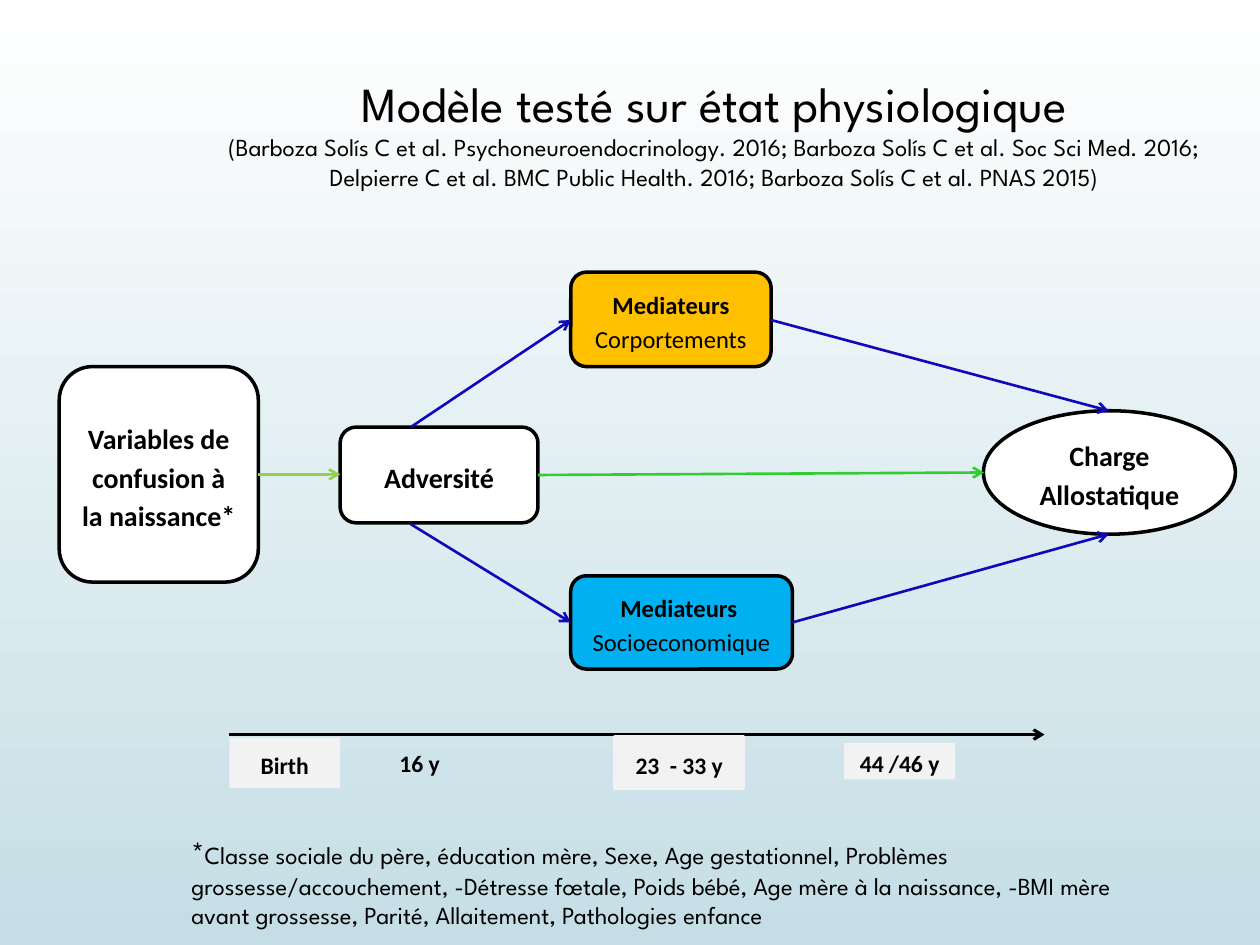
"""Build the slide of the mediation model from birth adversity to allostatic load."""
from lxml.etree import SubElement
from pptx import Presentation
from pptx.dml.color import RGBColor
from pptx.enum.shapes import MSO_CONNECTOR as Connector, MSO_SHAPE as Shape
from pptx.enum.text import MSO_ANCHOR as Anchor, PP_ALIGN as Align
from pptx.oxml.ns import qn
from pptx.util import Inches, Pt

COLUMNS, ROWS = 100, 75
BLACK, WHITE, GREY, BLUE = "000000", "FFFFFF", "F2F2F2", "1008BA"

color = RGBColor.from_string
presentation = Presentation()
presentation.slide_width, presentation.slide_height = Inches(10), Inches(7.5)
column = presentation.slide_width / COLUMNS
row = presentation.slide_height / ROWS
slide = presentation.slides.add_slide(presentation.slide_layouts[6])


def write(shape, paragraphs, font_name, align, anchor, spacing):
    frame = shape.text_frame
    frame.word_wrap, frame.vertical_anchor = True, anchor
    for index, runs in enumerate(paragraphs):
        paragraph = frame.add_paragraph() if index else frame.paragraphs[0]
        paragraph.alignment, paragraph.line_spacing = align, spacing
        for text, size, bold in runs:
            run = paragraph.add_run()
            run.text = text
            run.font.color.rgb = color(BLACK)
            font_format = {"name": font_name, "size": Pt(size), "bold": bold}
            for name, value in font_format.items():
                setattr(run.font, name, value)


def draw_box(kind, area, fill, line, paragraphs):
    left, top, width, height = area
    shape = slide.shapes.add_shape(kind, int(left * column), int(top * row),
                                   int(width * column), int(height * row))
    shape.shadow.inherit = False
    for target, value in ((shape.fill, fill), (shape.line.fill, line)):
        if value:
            target.solid()
            target.fore_color.rgb = color(value)
        else:
            target.background()
    if line:
        shape.line.width = Pt(2)
    write(shape, paragraphs, "Calibri", Align.CENTER, Anchor.MIDDLE, 1.15)


background = slide.background.fill
background.gradient()
background.gradient_angle = 270
for stop, value in zip(background.gradient_stops, (WHITE, "C5DEE5")):
    stop.color.rgb = color(value)

boxes = [
    (Shape.ROUNDED_RECTANGLE, (27, 33.9, 15.7, 7.6), WHITE,
     [[("Adversité", 16, True)]]),
    (Shape.OVAL, (78.05, 32.6, 20, 9.8), WHITE,
     [[("Charge Allostatique", 16, True)]]),
    (Shape.ROUNDED_RECTANGLE, (45.3, 21.6, 15.9, 7.5), "FFC000",
     [[("Mediateurs", 14, True)], [("Corportements", 14, False)]]),
    (Shape.ROUNDED_RECTANGLE, (45.3, 45.7, 17.6, 7.4), "00B0F0",
     [[("Mediateurs ", 14, True)], [("Socioeconomique", 14, False)]]),
    (Shape.ROUNDED_RECTANGLE, (4.7, 29.1, 15.8, 17.1), WHITE,
     [[("Variables de confusion à la naissance*", 16, True)]]),
]
for kind, area, fill, paragraphs in boxes:
    draw_box(kind, area, fill, BLACK, paragraphs)

arrows = [
    ((18.2, 58.3), (82.9, 58.3), BLACK, 1.75),
    ((42.7, 37.7), (78.1, 37.5), "33CC33", 1.5),
    ((20.5, 37.65), (27, 37.65), "92D050", 1.5),
    ((32.6, 33.9), (45.3, 25.4), BLUE, 1.5),
    ((61.2, 25.4), (88, 32.6), BLUE, 1.5),
    ((32.6, 41.6), (45.3, 49.4), BLUE, 1.5),
    ((62.9, 49.4), (88, 42.4), BLUE, 1.5),
]
for start, end, value, width in arrows:
    arrow = slide.shapes.add_connector(
        Connector.STRAIGHT, int(start[0] * column), int(start[1] * row),
        int(end[0] * column), int(end[1] * row))
    arrow.line.color.rgb = color(value)
    arrow.line.width = Pt(width)
    properties = arrow._element.spPr
    SubElement(properties.find(qn("a:ln")), qn("a:tailEnd"), type="arrow")
    SubElement(properties, qn("a:effectLst"))

ages = [
    ("Birth", (18.2, 58.55, 8.8, 4), GREY, None),
    ("16 y", (28.9, 58.3, 8.8, 4.2), None, None),
    ("23  - 33 y", (48.8, 58.5, 10.2, 4.1), GREY, GREY),
    ("44 /46 y", (67, 58.95, 8.8, 2.9), GREY, None),
]
for text, area, fill, line in ages:
    draw_box(Shape.RECTANGLE, area, fill, line, [[(text, 13.5, True)]])

captions = [
    ((14.2, 65.6, 79.8, 9.2), Align.LEFT, Anchor.TOP,
     [[("*", 18, False),
       ("Classe sociale du père, éducation mère, Sexe, Age gestationnel, "
        "Problèmes grossesse/accouchement, -Détresse fœtale, Poids bébé, "
        "Age mère à la naissance, -BMI mère avant grossesse, Parité, "
        "Allaitement, Pathologies enfance", 14, False)]]),
    ((13.4, 5.9, 86.6, 9.2), Align.CENTER, Anchor.MIDDLE,
     [[("Modèle testé sur état physiologique", 28, False)],
      [("(Barboza Solís C et al. Psychoneuroendocrinology. 2016; "
        "Barboza Solís C et al. Soc Sci Med. 2016; "
        "Delpierre C et al. BMC Public Health. 2016; "
        "Barboza Solís C et al. PNAS 2015)", 14, False)]]),
]
for (left, top, width, height), align, anchor, paragraphs in captions:
    caption = slide.shapes.add_textbox(int(left * column), int(top * row),
                                       int(width * column), int(height * row))
    write(caption, paragraphs, "League Spartan", align, anchor, 1.0)

presentation.save("out.pptx")
